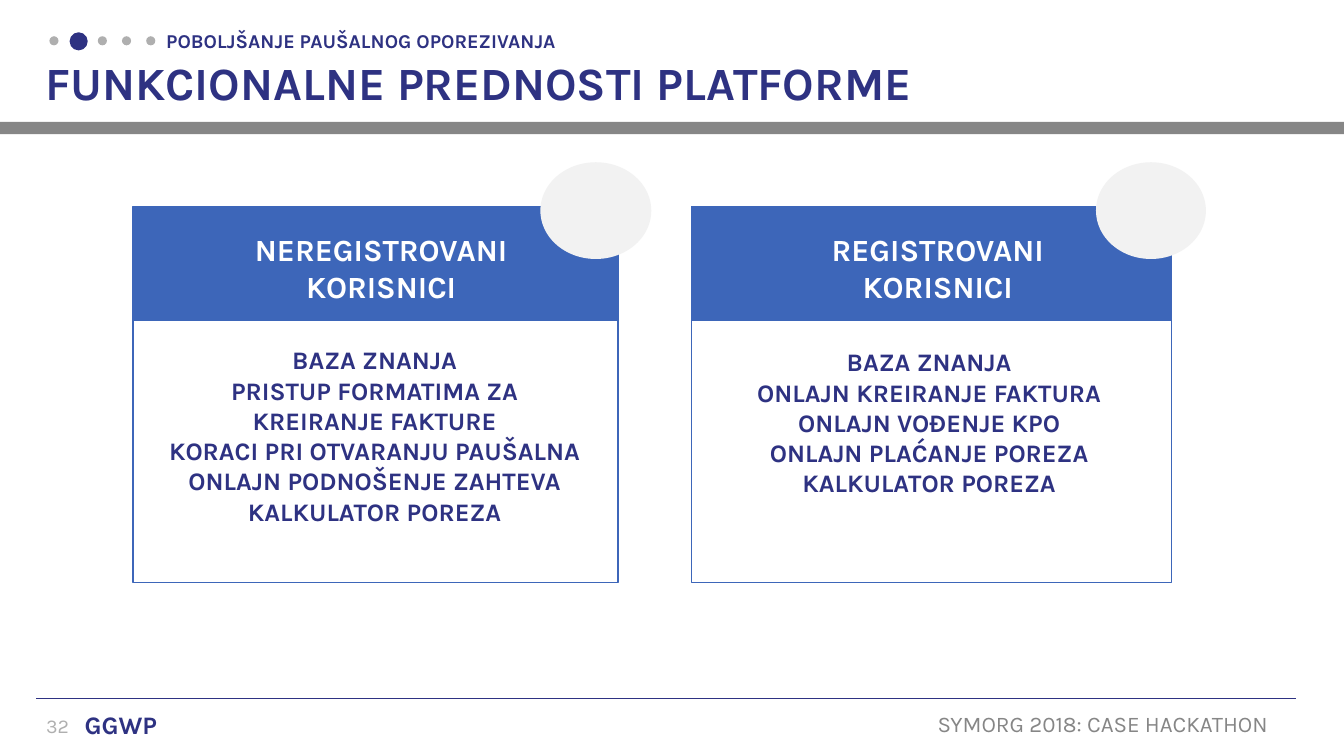
from dataclasses import dataclass

from lxml import etree
from pptx import Presentation
from pptx import util as u
from pptx.dml.color import RGBColor
from pptx.enum import shapes, text
from pptx.oxml.ns import qn
from pptx.shapes.autoshape import Shape
from pptx.slide import Slide

PX = 9144  # EMU: 100 px to the inch
FONT = "Karla"
NAVY = RGBColor(0x2E, 0x32, 0x82)
BLUE = RGBColor(0x3D, 0x66, 0xB9)
GRAY = RGBColor(0x86, 0x86, 0x86)
SILVER = RGBColor(0xAF, 0xAF, 0xAF)
PALE = RGBColor(0xF2, 0xF2, 0xF2)
WHITE = RGBColor(0xFF, 0xFF, 0xFF)

RECT = shapes.MSO_SHAPE.RECTANGLE
OVAL = shapes.MSO_SHAPE.OVAL
CENTER = text.PP_ALIGN.CENTER

DOT_COUNT, CURRENT_DOT = 5, 1
CARD_TOP, HEADER_HEIGHT = 205, 113
FRAME_TOP, FRAME_HEIGHT = 273, 305
BADGE_TOP, BADGE_HEIGHT = 161, 96
HEADING_INSET, HEADING_TOP, HEADING_HEIGHT = 33, 224, 84
BENEFITS_WIDTH = 439


@dataclass(frozen=True)
class Box:
    left: int
    top: int
    width: int
    height: int

    def emu(self) -> list[int]:
        return [side * PX for side in (self.left, self.top, self.width, self.height)]


@dataclass(frozen=True)
class UserCard:
    left: int
    width: int
    badge_left: int
    badge_width: int
    heading_width: int
    heading: list[str]
    benefits_left: int
    benefits_top: int
    benefits_height: int
    benefits: list[str]


CARDS = [
    UserCard(
        132, 481, 536, 110, 426, ["NEREGISTROVANI KORISNICI"],
        152, 337, 222,
        [
            "BAZA ZNANJA",
            "PRISTUP FORMATIMA ZA KREIRANJE FAKTURE",
            "KORACI PRI OTVARANJU PAUŠALNA",
            "ONLAJN PODNOŠENJE ZAHTEVA",
            "KALKULATOR POREZA",
        ],
    ),
    UserCard(
        686, 476, 1087, 109, 422, ["REGISTROVANI", "KORISNICI"],
        702, 339, 162,
        [
            "BAZA ZNANJA",
            "ONLAJN KREIRANJE FAKTURA",
            "ONLAJN VOĐENJE KPO",
            "ONLAJN PLAĆANJE POREZA",
            "KALKULATOR POREZA",
        ],
    ),
]


def add_text(
    slide: Slide,
    box: Box,
    lines: list[str],
    *,
    size: int,
    color: RGBColor,
    bold: bool = False,
    align: text.PP_ALIGN = text.PP_ALIGN.LEFT,
    anchor: text.MSO_ANCHOR = text.MSO_ANCHOR.TOP,
    spacing: float = 1.0,
    wrap: bool = True,
) -> None:
    frame = slide.shapes.add_textbox(*box.emu()).text_frame
    frame.word_wrap = wrap
    frame.vertical_anchor = anchor
    frame.text = "\n".join(lines)
    for paragraph in frame.paragraphs:
        paragraph.alignment = align
        paragraph.line_spacing = spacing
        font = paragraph.runs[0].font
        font.name, font.size, font.bold = FONT, u.Pt(size), bold
        font.color.rgb = color


def add_figure(
    slide: Slide,
    kind: shapes.MSO_SHAPE,
    box: Box,
    fill: RGBColor | None = None,
    line: RGBColor | None = None,
) -> Shape:
    figure = slide.shapes.add_shape(kind, *box.emu())
    figure.shadow.inherit = False
    if fill is None:
        figure.fill.background()
    else:
        figure.fill.solid()
        figure.fill.fore_color.rgb = fill
    if line is None:
        figure.line.fill.background()
    else:
        figure.line.color.rgb = line
        figure.line.width = u.Pt(1)
    return figure


def add_footer(slide: Slide) -> None:
    rule = slide.shapes.add_connector(
        shapes.MSO_CONNECTOR.STRAIGHT, 36 * PX, 693 * PX, 1285 * PX, 693 * PX
    )
    rule.line.color.rgb = NAVY
    rule.line.width = u.Pt(0.5)
    etree.SubElement(rule.element.spPr, qn("a:effectLst"))
    add_text(slide, Box(36, 703, 103, 67), ["32"], size=14, color=SILVER)
    add_text(slide, Box(74, 699, 97, 40), ["GGWP"],
             size=18, color=NAVY, bold=True, wrap=False)
    add_text(slide, Box(920, 700, 365, 37), ["SYMORG 2018: CASE HACKATHON"],
             size=16, color=GRAY, wrap=False)


def add_progress_dots(slide: Slide) -> None:
    for index in range(DOT_COUNT):
        left = 49 + 24 * index
        if index == CURRENT_DOT:
            add_figure(slide, OVAL, Box(left - 4, 32, 18, 18), NAVY)
        else:
            add_figure(slide, OVAL, Box(left, 36, 9, 9), SILVER)


def add_header(slide: Slide) -> None:
    add_progress_dots(slide)
    add_text(slide, Box(155, 26, 511, 28), ["POBOLJŠANJE PAUŠALNOG OPOREZIVANJA"],
             size=14, color=NAVY, bold=True, spacing=0.9)
    add_figure(slide, RECT, Box(0, 121, 1333, 12), GRAY)
    add_text(slide, Box(35, 58, 1264, 57), ["FUNKCIONALNE PREDNOSTI PLATFORME"],
             size=33, color=NAVY, bold=True, spacing=0.9,
             anchor=text.MSO_ANCHOR.BOTTOM)


def add_card(slide: Slide, card: UserCard) -> None:
    add_figure(slide, RECT, Box(card.left, CARD_TOP, card.width, HEADER_HEIGHT),
               BLUE, BLUE)
    add_figure(slide, RECT, Box(card.left, FRAME_TOP, card.width, FRAME_HEIGHT),
               line=BLUE)
    add_figure(slide, OVAL,
               Box(card.badge_left, BADGE_TOP, card.badge_width, BADGE_HEIGHT), PALE)
    add_text(slide,
             Box(card.left + HEADING_INSET, HEADING_TOP,
                 card.heading_width, HEADING_HEIGHT),
             card.heading, size=22, color=WHITE, bold=True, align=CENTER)
    add_text(slide,
             Box(card.benefits_left, card.benefits_top,
                 BENEFITS_WIDTH, card.benefits_height),
             card.benefits, size=18, color=NAVY, bold=True, align=CENTER)


def main() -> None:
    deck = Presentation()
    deck.slide_width, deck.slide_height = 1333 * PX, 750 * PX
    slide = deck.slides.add_slide(deck.slide_layouts[6])
    add_footer(slide)
    add_header(slide)
    for card in CARDS:
        add_card(slide, card)
    deck.save("out.pptx")


if __name__ == "__main__":
    main()
